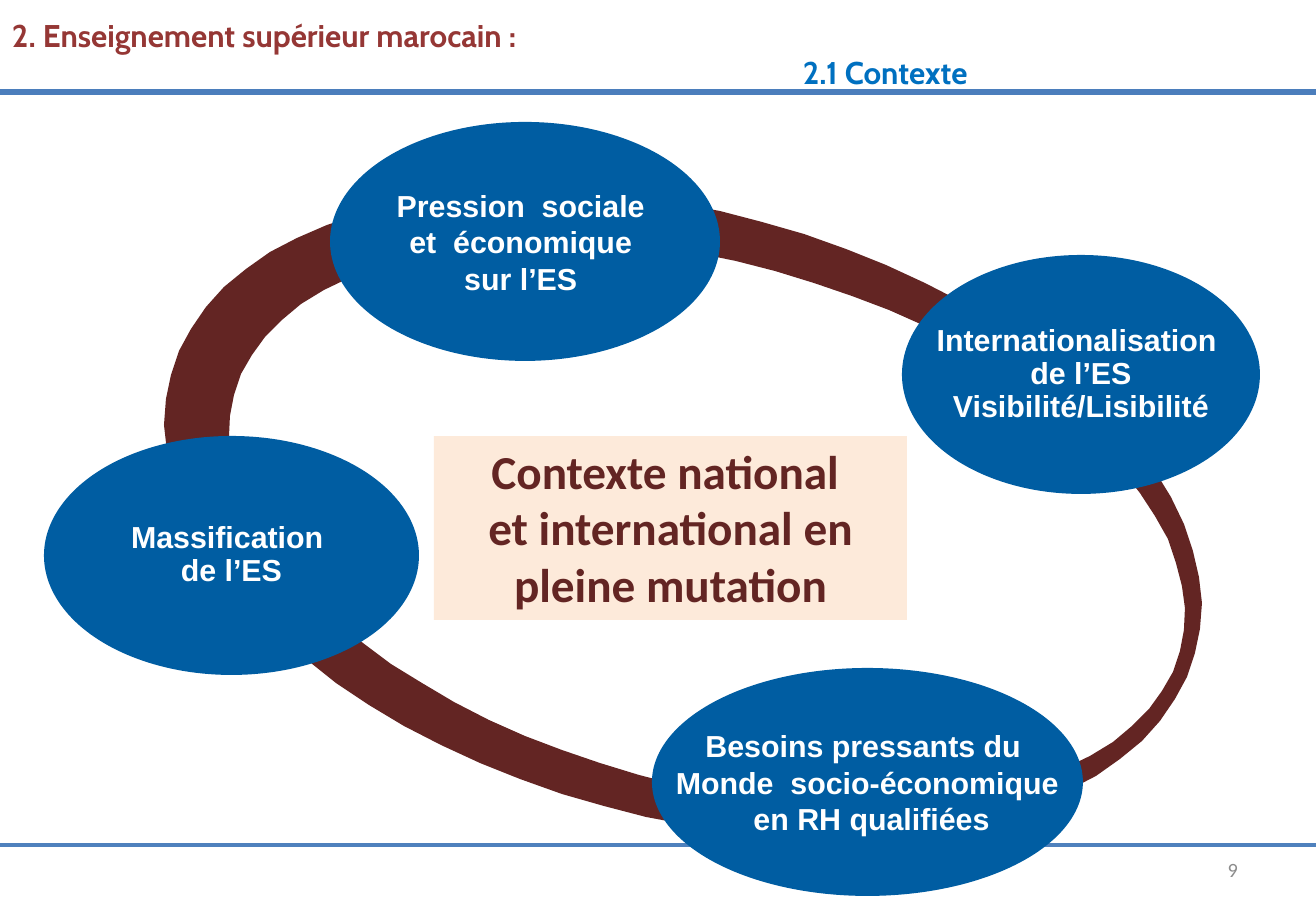
import math
import pptx
import pptx.util
import pptx.dml.color
import pptx.enum.shapes
import pptx.enum.text
import pptx.oxml

PX = 7526
SHAPES = pptx.enum.shapes.MSO_SHAPE
ALIGN = pptx.enum.text.PP_ALIGN
MIDDLE = pptx.enum.text.MSO_ANCHOR.MIDDLE


def color(hex_code):
    return pptx.dml.color.RGBColor.from_string(hex_code)


def write(frame, lines, font_name, size, hex_code, bold, align, spacing=None):
    for index, line in enumerate(lines):
        paragraph = frame.paragraphs[0] if index == 0 else frame.add_paragraph()
        paragraph.text = line
        paragraph.alignment = align
        paragraph.line_spacing = spacing
        paragraph.font.name = font_name
        paragraph.font.size = pptx.util.Pt(size)
        paragraph.font.bold = bold
        paragraph.font.color.rgb = color(hex_code)


deck = pptx.Presentation()
deck.slide_width = 1316 * PX
deck.slide_height = 911 * PX
slide = deck.slides.add_slide(deck.slide_layouts[6])
shapes = slide.shapes

for y, hex_code, weight in [(845, "4F81BD", 2.25), (93, "4F81BD", 2.25), (92, "4B7EBC", 3)]:
    rule = shapes.add_connector(
        pptx.enum.shapes.MSO_CONNECTOR.STRAIGHT, 0, y * PX, 1316 * PX, y * PX)
    rule.line.color.rgb = color(hex_code)
    rule.line.width = pptx.util.Pt(weight)
    rule._element.spPr.append(pptx.oxml.parse_xml(
        '<a:effectLst xmlns:a="http://schemas.openxmlformats.org/drawingml/2006/main"/>'))

heading = shapes.add_textbox(0, 10 * PX, 1316 * PX, 77 * PX).text_frame
heading.word_wrap = True
write(heading, ["2. Enseignement supérieur marocain :", "2.1 Contexte"],
      "Cabin", 18.6, "953735", True, ALIGN.LEFT)
subtitle = heading.paragraphs[1]
subtitle.font.color.rgb = color("0070C0")
subtitle._p.get_or_add_pPr().set("marL", str(791 * PX))

message = shapes.add_shape(SHAPES.RECTANGLE, 434 * PX, 436 * PX, 473 * PX, 184 * PX)
message.shadow.inherit = False
message.fill.solid()
message.fill.fore_color.rgb = color("FDEADA")
message.line.fill.background()
message.text_frame.word_wrap = True
message.text_frame.vertical_anchor = pptx.enum.text.MSO_ANCHOR.TOP
write(message.text_frame, ["Contexte national ", "et international en pleine mutation"],
      "Calibri", 28, "632523", True, ALIGN.CENTER)

tilt = math.radians(15.2)
contours = []
for center_x, center_y, radius_x, radius_y in [(683, 514, 531, 303), (707, 523, 490, 261)]:
    contour = []
    for step in range(76):
        angle = 2 * math.pi * step / 76
        along, across = radius_x * math.cos(angle), radius_y * math.sin(angle)
        contour.append((
            round(center_x + along * math.cos(tilt) - across * math.sin(tilt)),
            round(center_y + along * math.sin(tilt) + across * math.cos(tilt))))
    contours.append(contour)
outer, inner = contours
inner.reverse()
builder = shapes.build_freeform(*outer[0], scale=PX)
builder.add_line_segments(outer[1:], close=True)
builder.move_to(*inner[0])
builder.add_line_segments(inner[1:], close=True)
ring = builder.convert_to_shape()
ring.shadow.inherit = False
ring.fill.solid()
ring.fill.fore_color.rgb = color("632523")
ring.line.fill.background()

factors = [
    (44, 436, 375, 239, 0, 0.9, ["Massification ", "de l’ES"]),
    (330, 122, 390, 239, 12, None, ["Pression  sociale ", "et  économique ", "sur l’ES "]),
    (902, 255, 358, 239, 0, 0.9,
     ["Internationalisation ", "de l’ES", "Visibilité/Lisibilité"]),
    (652, 668, 431, 228, 12, None,
     ["Besoins pressants du ", "Monde  socio-économique", " en RH qualifiées"]),
]
for left, top, width, height, inset, spacing, lines in factors:
    factor = shapes.add_shape(SHAPES.OVAL, left * PX, top * PX, width * PX, height * PX)
    factor.shadow.inherit = False
    factor.fill.solid()
    factor.fill.fore_color.rgb = color("005DA2")
    factor.line.fill.background()
    frame = factor.text_frame
    frame.word_wrap = False
    frame.vertical_anchor = MIDDLE
    frame.margin_left = frame.margin_right = inset * PX
    write(frame, lines, "Arial", 18, "FFFFFF", True, ALIGN.CENTER, spacing)

page_number = shapes.add_textbox(943 * PX, 845 * PX, 307 * PX, 49 * PX).text_frame
page_number.word_wrap = True
page_number.vertical_anchor = MIDDLE
write(page_number, ["9"], "Calibri", 12, "8C8C8C", False, ALIGN.RIGHT)

deck.save("out.pptx")
